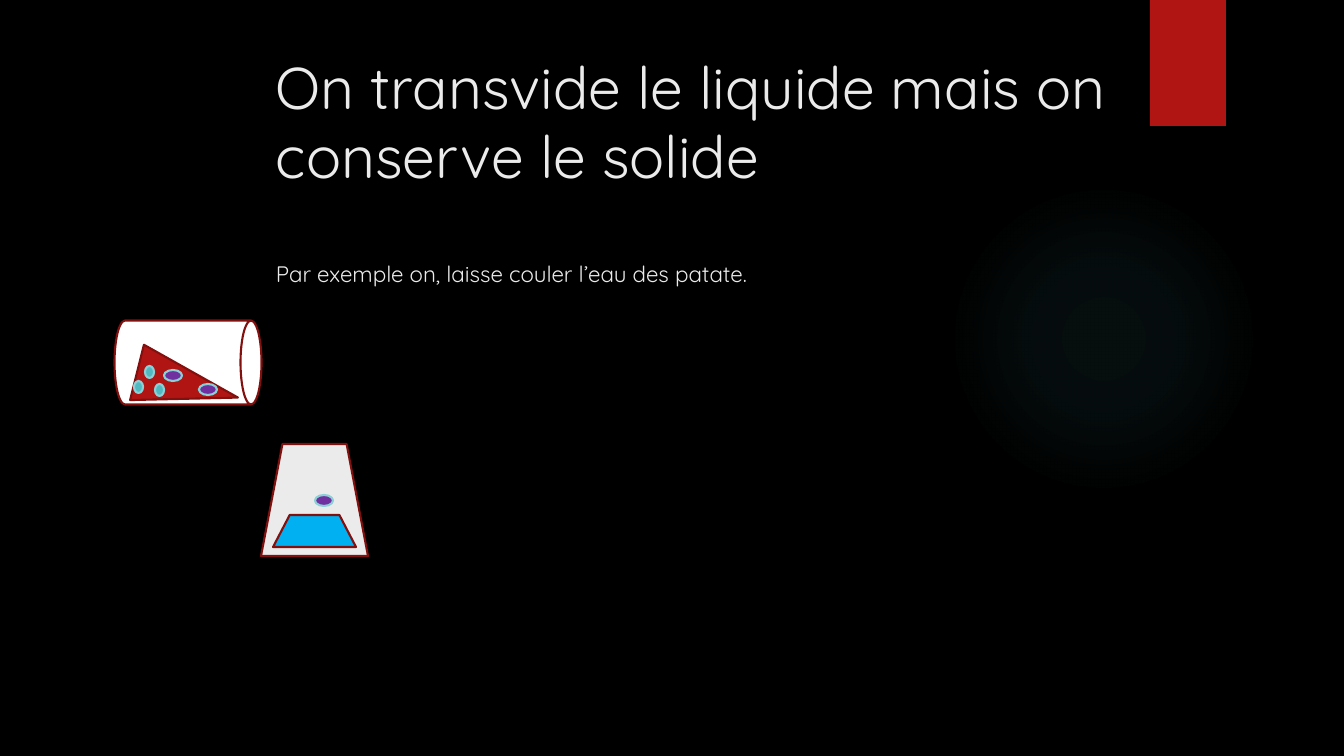
"""Build a slide on pouring off a liquid while keeping the solid."""
from lxml import etree
from pptx import Presentation
from pptx.dml.color import RGBColor as Rgb
from pptx.enum.shapes import MSO_SHAPE as Form
from pptx.enum.text import MSO_ANCHOR as Anchor, PP_ALIGN as Align
from pptx.oxml import parse_xml
from pptx.oxml.ns import nsdecls, qn
from pptx.util import Emu, Pt

BLACK = Rgb(0x00, 0x00, 0x00)
WHITE = Rgb(0xFF, 0xFF, 0xFF)
PALE = Rgb(0xEB, 0xEB, 0xEB)
RED = Rgb(0xB0, 0x15, 0x13)
DARK = Rgb(0x82, 0x10, 0x0E)
TEAL = Rgb(0x50, 0xB9, 0xC1)
LIGHT = Rgb(0x8A, 0xD0, 0xD6)
PURPLE = Rgb(0x70, 0x30, 0xA0)
BLUE = Rgb(0x00, 0xB0, 0xF0)

FONT = "Quicksand"
SIZE = (1344, 756)
GLOW = (949, 184, 310, 310)
STOPS = [(0, 7), (36, 6), (69, 0)]
BANNER = (1150, 0, 76, 126)
TEXT_BOX = (266, 50, 910, 354)
TEXTS = [
    ("On transvide le liquide mais on conserve le solide", 42, 0),
    ("Par exemple on, laisse couler l’eau des patate.", 16, 50),
]
VESSELS = [
    (Form.CAN, (146, 289, 84, 147), 90, WHITE),
    (Form.FLOWCHART_MANUAL_OPERATION, (261, 444, 107, 112), 180, PALE),
    (Form.ISOSCELES_TRIANGLE, (159, 333, 57, 104), 104, RED),
]
GRAINS = [
    (TEAL, (9, 12), [(134, 381), (155, 384), (145, 366)]),
    (PURPLE, (18, 11), [(315, 495), (199, 384), (164, 370)]),
]
WATER = (Form.FLOWCHART_MANUAL_OPERATION, (273, 515, 83, 32), 180, BLUE)


def px(num):
    return Emu(round(num * 914400 / 100.8))


def draw(slide, form, box, fill=None, line=None, turn=0):
    shape = slide.shapes.add_shape(form, *map(px, box))
    shape.shadow.inherit = False
    shape.rotation = turn
    if fill is not None:
        shape.fill.solid()
        shape.fill.fore_color.rgb = fill
    if line is None:
        shape.line.fill.background()
    else:
        shape.line.color.rgb = line
        shape.line.width = Pt(1.5)
    return shape


def add_glow(slide):
    shape = draw(slide, Form.OVAL, GLOW)
    grad = parse_xml(f'<a:gradFill {nsdecls("a")} rotWithShape="1"/>')
    stops = etree.SubElement(grad, qn("a:gsLst"))
    for place, alpha in STOPS:
        stop = etree.SubElement(stops, qn("a:gs"), pos=str(place * 1000))
        tint = etree.SubElement(stop, qn("a:srgbClr"), val=str(TEAL))
        etree.SubElement(tint, qn("a:alpha"), val=str(alpha * 1000))
    round_fill = etree.SubElement(grad, qn("a:path"), path="circle")
    sides = dict.fromkeys("ltrb", "50000")
    etree.SubElement(round_fill, qn("a:fillToRect"), **sides)
    shape._element.spPr.find(qn("a:prstGeom")).addnext(grad)


def add_text(slide):
    frame = slide.shapes.add_textbox(*map(px, TEXT_BOX)).text_frame
    frame.word_wrap = True
    frame.vertical_anchor = Anchor.TOP
    for i, (words, size, gap) in enumerate(TEXTS):
        para = frame.add_paragraph() if i else frame.paragraphs[0]
        para.alignment = Align.LEFT
        para.line_spacing = 0.97
        if gap:
            para.space_before = Pt(gap)
        run = para.add_run()
        run.text = words
        run.font.name = FONT
        run.font.size = Pt(size)
        run.font.color.rgb = PALE


def main():
    deck = Presentation()
    deck.slide_width, deck.slide_height = map(px, SIZE)
    slide = deck.slides.add_slide(deck.slide_layouts[6])
    slide.background.fill.solid()
    slide.background.fill.fore_color.rgb = BLACK
    add_glow(slide)
    draw(slide, Form.RECTANGLE, BANNER, RED)
    add_text(slide)
    for form, box, turn, fill in VESSELS:
        draw(slide, form, box, fill, DARK, turn)
    for fill, size, spots in GRAINS:
        for spot in spots:
            draw(slide, Form.OVAL, spot + size, fill, LIGHT)
    form, box, turn, fill = WATER
    draw(slide, form, box, fill, DARK, turn)
    deck.save("out.pptx")


if __name__ == "__main__":
    main()
